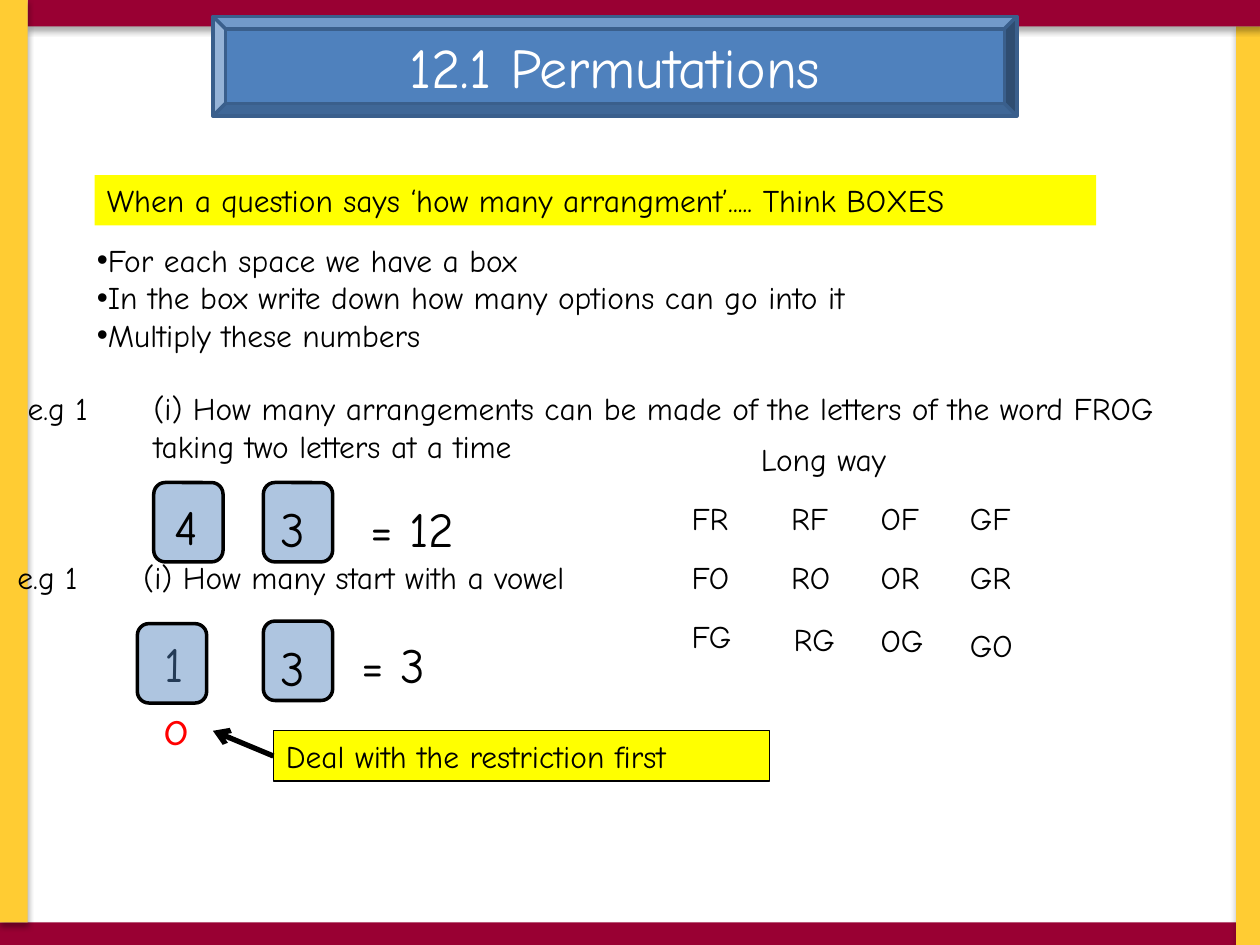
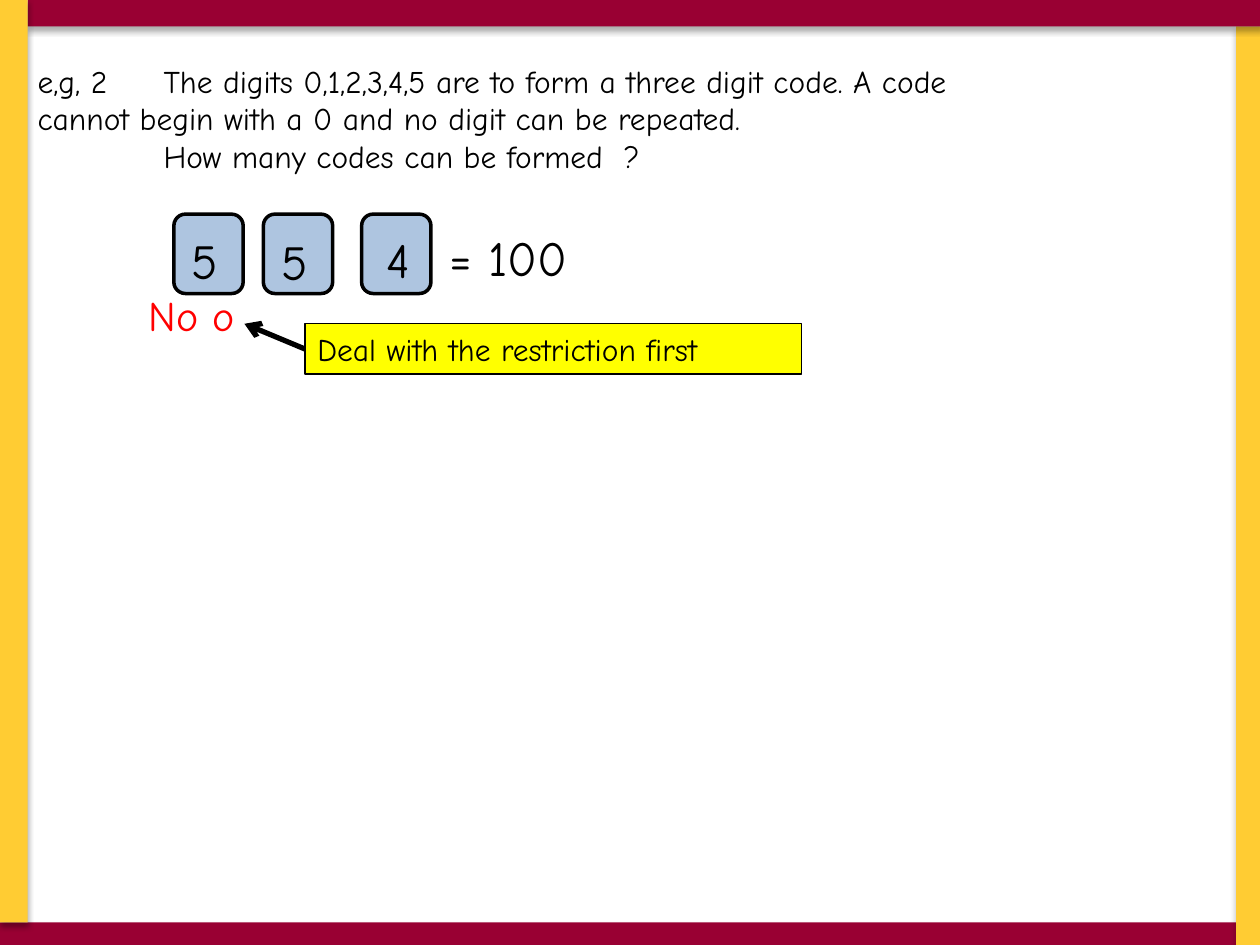
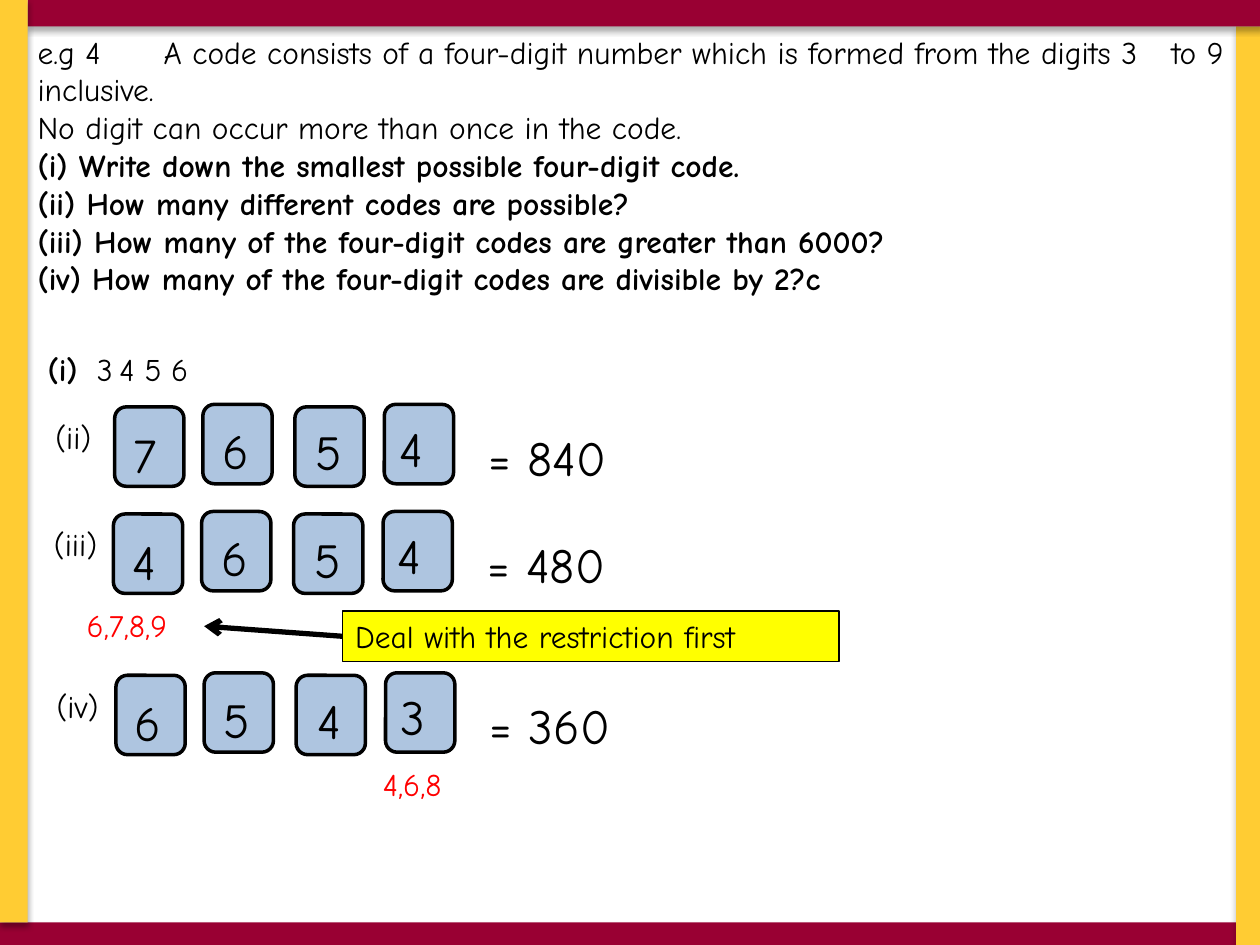
from lxml.etree import SubElement
from pptx import Presentation
from pptx.dml.color import RGBColor
from pptx.enum.shapes import MSO_CONNECTOR, MSO_SHAPE
from pptx.enum.text import MSO_ANCHOR, MSO_AUTO_SIZE, PP_ALIGN
from pptx.oxml.ns import qn
from pptx.util import Inches, Pt

FONT = "Comic Neue"
BLACK, WHITE, RED, YELLOW = "000000", "FFFFFF", "FF0000", "FFFF00"
MAROON, GOLD, BLUE, NAVY = "990033", "FFCC33", "4F81BD", "3A5F8C"
BOX_W, BOX_H = 0.55, 0.63
BANDS = [
    (0, 7.32, 10, 0.21, MAROON),
    (9.81, 0.21, 0.21, 7.32, GOLD),
    (0.22, 0, 9.8, 0.21, MAROON),
    (0, 0, 0.22, 7.32, GOLD),
]
ROW_BOXES = [(0, 0), (0.7, -0.02), (1.43, 0), (2.14, -0.02)]
ROW_SHIFTS = [(-0.08, 0.09), (-0.07, 0.08), (-0.06, 0.07), (-0.11, 0.06)]


def rgb(value):
    """Return the colour for a hex string."""
    return RGBColor.from_string(value)


def write(tf, text, size=18, color=BLACK, bold=(), bullet=False, align=None):
    """Write each line of text as a paragraph; bold holds line indexes."""
    for i, line in enumerate(text.split("\n")):
        p = tf.paragraphs[0] if i == 0 else tf.add_paragraph()
        if align is not None:
            p.alignment = align
        pPr = p._p.get_or_add_pPr()
        pPr.set("defTabSz", str(Inches(1)))
        if bullet:
            SubElement(pPr, qn("a:buFont"), typeface="Arial")
            SubElement(pPr, qn("a:buChar"), char="•")
        r = p.add_run()
        r.text = line
        r.font.name = FONT
        r.font.size = Pt(size)
        r.font.bold = i in bold
        r.font.color.rgb = rgb(color)


class Deck:
    """Holds the presentation style and the current slide."""

    def __init__(self):
        """Start an empty 4:3 presentation."""
        self.prs = Presentation()
        self.prs.slide_width, self.prs.slide_height = Inches(10), Inches(7.5)
        self.s = None

    def slide(self):
        """Add a blank slide framed by the four bands."""
        self.s = self.prs.slides.add_slide(self.prs.slide_layouts[6])
        for x, y, w, h, color in BANDS:
            self.band(x, y, w, h, color)

    def shape(self, kind, x, y, w, h, fill, line=None, width=2):
        """Add a preset shape without a shadow."""
        sp = self.s.shapes.add_shape(kind, Inches(x), Inches(y), Inches(w), Inches(h))
        sp.shadow.inherit = False
        sp.fill.solid()
        sp.fill.fore_color.rgb = rgb(fill)
        if line:
            sp.line.color.rgb = rgb(line)
            sp.line.width = Pt(width)
        else:
            sp.line.fill.background()
        return sp

    def band(self, x, y, w, h, color):
        """Add a frame band with a soft shadow below it."""
        sp = self.shape(MSO_SHAPE.RECTANGLE, x, y, w, h, color)
        effects = sp._element.spPr.find(qn("a:effectLst"))
        shadow = SubElement(effects, qn("a:outerShdw"), blurRad=str(Pt(3.5)),
                            dist=str(Pt(2.2)), dir="5400000", rotWithShape="0")
        clr = SubElement(shadow, qn("a:srgbClr"), val=BLACK)
        SubElement(clr, qn("a:alpha"), val="32000")

    def title(self, text):
        """Add the bevelled title plate."""
        sp = self.shape(MSO_SHAPE.BEVEL, 1.69, 0.13, 6.38, 0.79, BLUE, NAVY)
        tf = sp.text_frame
        tf.vertical_anchor = MSO_ANCHOR.MIDDLE
        write(tf, text, size=32, color=WHITE, align=PP_ALIGN.CENTER)

    def text(self, x, y, w, text, h=0.4, wrap=False, fill=None, line=None, **fmt):
        """Add a text box, optionally filled and outlined."""
        sp = self.s.shapes.add_textbox(Inches(x), Inches(y), Inches(w), Inches(h))
        if fill:
            sp.fill.solid()
            sp.fill.fore_color.rgb = rgb(fill)
        if line:
            sp.line.color.rgb = rgb(line)
            sp.line.width = Pt(0.75)
        tf = sp.text_frame
        tf.word_wrap = wrap
        tf.auto_size = MSO_AUTO_SIZE.SHAPE_TO_FIT_TEXT
        write(tf, text, **fmt)

    def number(self, x, y, text, w=0.56, color=BLACK):
        """Add a large digit or result."""
        self.text(x, y, w, text, h=0.57, size=28, color=color)

    def box(self, x, y):
        """Add a translucent rounded box."""
        sp = self.shape(MSO_SHAPE.ROUNDED_RECTANGLE, x, y, BOX_W, BOX_H, BLUE, BLACK)
        clr = sp._element.spPr.find(qn("a:solidFill")).find(qn("a:srgbClr"))
        SubElement(clr, qn("a:alpha"), val="46000")

    def option(self, x, y, digit, dx, dy):
        """Add a box with its number of options, shifted by dx and dy."""
        self.box(x, y)
        self.number(x + dx, y + dy, f" {digit}")

    def row(self, x, y, label, digits, result):
        """Add a labelled row of four boxes and the product."""
        self.text(x - 0.57, y + 0.04, 0.58, label)
        for (bx, by), (dx, dy), digit in zip(ROW_BOXES, ROW_SHIFTS, digits):
            self.option(x + bx, y + by, digit, dx, dy)
        self.number(x + 2.74, y + 0.11, f" = {result}", w=1.36)

    def restriction(self, x, y, tip_x, tip_y):
        """Add the restriction note with an arrow to its tip."""
        self.text(x, y, 3.94, "Deal with the restriction first", wrap=True,
                  fill=YELLOW, line=BLACK)
        cn = self.s.shapes.add_connector(MSO_CONNECTOR.STRAIGHT, Inches(x),
                                         Inches(y + 0.2), Inches(tip_x), Inches(tip_y))
        cn.line.color.rgb = rgb(BLACK)
        cn.line.width = Pt(3)
        SubElement(cn.line._get_or_add_ln(), qn("a:tailEnd"), type="arrow")
        SubElement(cn._element.spPr, qn("a:effectLst"))


def permutations(d):
    """Build the slide on arrangements and boxes."""
    d.slide()
    d.title("12.1 Permutations")
    d.text(0.75, 1.39, 7.95, "When a question says ‘how many arrangment’..... Think BOXES",
           wrap=True, fill=YELLOW)
    d.text(0.67, 1.86, 6.62, "For each space we have a box\n"
           "In the box write down how many options can go into it\n"
           "Multiply these numbers", h=1.01, bullet=True)
    d.text(0.12, 3.04, 9.78, "e.g 1  \t(i) How many arrangements can be made of the "
           "letters of the word FROG\n\ttaking two letters at a time", h=0.71)
    d.option(1.22, 3.83, 4, -0.06, 0.06)
    d.option(2.09, 3.83, 3, -0.09, 0.08)
    d.number(2.71, 3.91, " = 12", w=1.05)
    d.text(5.94, 3.44, 1.25, "Long way")
    columns = [(5.39, 5.39, 4.85, "FR FO FG"), (6.18, 6.2, 4.87, "RF RO RG"),
               (6.89, 6.89, 4.88, "OF OR OG"), (7.6, 7.6, 4.92, "GF GR GO")]
    for x, last_x, last_y, pairs in columns:
        spots = [(x, 3.91), (x, 4.38), (last_x, last_y)]
        for (left, top), pair in zip(spots, pairs.split()):
            d.text(left, top, 0.63, pair, wrap=True)
    d.text(0.04, 4.38, 4.9, "e.g 1  \t(i) How many start with a vowel")
    d.number(1.08, 4.98, " 1", w=0.5)
    d.box(1.09, 4.95)
    d.option(2.09, 4.93, 3, -0.09, 0.08)
    d.number(2.64, 4.99, " = 3", w=0.88)
    d.number(1.2, 5.48, "o", w=0.41, color=RED)
    d.restriction(2.17, 5.8, 1.69, 5.8)


def three_digit_code(d):
    """Build the slide on three digit codes."""
    d.slide()
    d.text(0.2, 0.44, 8.66, "e,g, 2\tThe digits 0,1,2,3,4,5 are to form a three digit code. "
           "A code \tcannot begin with a 0 and no digit can be repeated.\n"
           "\tHow many codes can be formed  ?", h=1.01, wrap=True)
    d.option(1.38, 1.7, 5, -0.09, 0.08)
    d.option(2.09, 1.7, 5, -0.08, 0.09)
    d.option(2.87, 1.7, 4, -0.03, 0.07)
    d.number(3.34, 1.76, " = 100", w=1.29)
    d.text(1.08, 2.25, 0.92, "No o", h=0.5, size=24, color=RED)
    d.restriction(2.42, 2.57, 1.94, 2.57)


def four_digit_code(d):
    """Build the slide on four-digit codes."""
    d.slide()
    d.text(0.2, 0.21, 9.8, "e.g 4\tA code consists of a four-digit number which is formed "
           "from the digits 3 \tto 9 inclusive.\n"
           "No digit can occur more than once in the code.\n"
           "(i) Write down the smallest possible four-digit code.\n"
           "(ii) How many different codes are possible?\n"
           "(iii) How many of the four-digit codes are greater than 6000?\n"
           "(iv) How many of the four-digit codes are divisible by 2?c",
           h=2.22, wrap=True, bold=range(2, 6))
    d.text(0.28, 2.73, 0.57, "(i)", bold=[0])
    for x, digit in zip((0.67, 0.85, 1.05, 1.26), "3456"):
        d.text(x, 2.73, 0.36, digit)
    d.row(0.91, 3.23, "(ii)", "7654", 840)
    d.row(0.9, 4.08, "(iii)", "4654", 480)
    d.text(0.59, 4.76, 1.03, "6,7,8,9", color=RED)
    d.restriction(2.72, 4.85, 1.62, 4.97)
    d.row(0.92, 5.36, "(iv)", "6543", 360)
    d.text(2.94, 6.02, 0.81, "4,6,8", color=RED)


def main():
    """Build and save the presentation."""
    d = Deck()
    permutations(d)
    three_digit_code(d)
    four_digit_code(d)
    d.prs.save("out.pptx")


if __name__ == "__main__":
    main()
